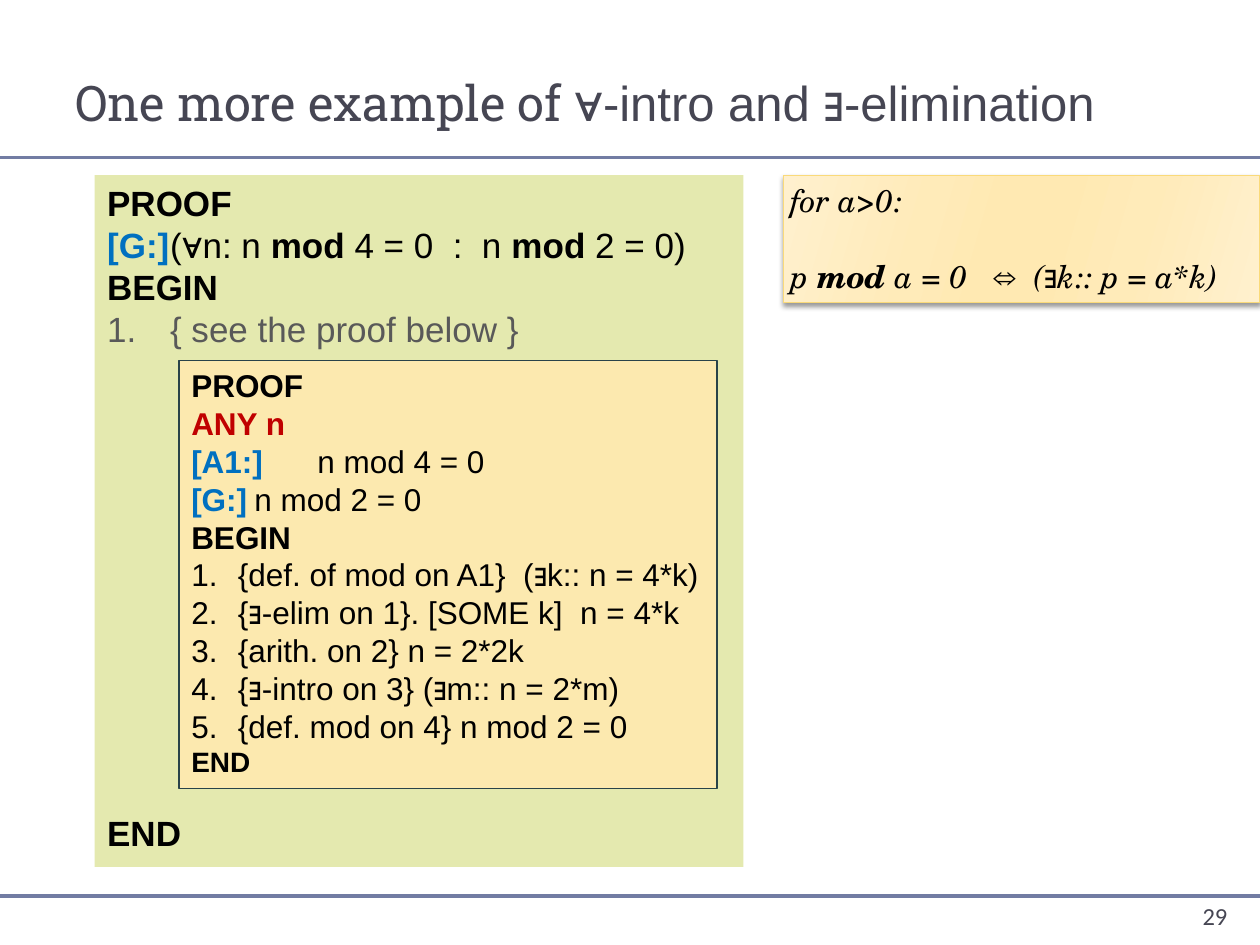
"""Build the slide on forall-introduction and exists-elimination."""
from dataclasses import dataclass

from lxml import etree
from pptx import Presentation
from pptx import util as u
from pptx.dml.color import RGBColor
from pptx.enum import shapes, text
from pptx.oxml import ns


@dataclass(frozen=True)
class Theme:
    ink: str = "000000"
    title: str = "464653"
    rule: str = "727CA3"
    label: str = "0070C0"
    any: str = "C00000"
    muted: str = "595959"
    outer: str = "E4E9AF"
    inner: str = "FCE9AF"
    inner_line: str = "294349"
    note_line: str = "FADA7A"
    note_stops: tuple = ((0, "FFF0CE"), (30, "FFEBB9"), (45, "FFE9B2"),
                         (55, "FFE9B2"), (73, "FFEBB9"), (100, "FFF0CE"))
    sans: str = "Arial"
    slab: str = "Roboto Slab"
    serif: str = "TeX Gyre Schola"
    plain: str = "Calibri"
    title_pt: int = 28
    proof_pt: int = 20
    step_pt: int = 18
    end_pt: int = 16
    page_pt: int = 14
    leading: float = 1.2


def sub(parent, tag, **attrs):
    """Append a drawing element with the given attributes."""
    return etree.SubElement(parent, ns.qn("a:" + tag), {k: str(v) for k, v in attrs.items()})


class Sheet:
    """Hold the theme and the slide, measured in 100 columns by 75 rows."""

    def __init__(self, prs, theme):
        """Add a title and content slide."""
        self.theme = theme
        self.col, self.row = prs.slide_width / 100, prs.slide_height / 75
        self.slide = prs.slides.add_slide(prs.slide_layouts[1])

    def box(self, x, y, w, h):
        """Turn grid units into lengths."""
        return [u.Emu(round(v)) for v in (x * self.col, y * self.row, w * self.col, h * self.row)]

    def place(self, s, *cells):
        """Move a placeholder to grid cells."""
        s.left, s.top, s.width, s.height = self.box(*cells)
        return s

    def paint(self, s, fill, line=None):
        """Give a shape a flat fill and an optional thin outline."""
        s.fill.solid()
        s.fill.fore_color.rgb = RGBColor.from_string(fill)
        if line:
            s.line.color.rgb = RGBColor.from_string(line)
            s.line.width = u.Pt(0.75)
        else:
            s.line.fill.background()

    def rule(self, y):
        """Draw a line across the slide."""
        x, top, w, _ = self.box(0, y, 100, 0)
        s = self.slide.shapes.add_connector(shapes.MSO_CONNECTOR.STRAIGHT, x, top, w, top)
        s.line.color.rgb = RGBColor.from_string(self.theme.rule)
        s.line.width = u.Pt(2.25)
        sub(s._element.spPr, "effectLst")

    def title(self, *runs):
        """Fill the title with (text, font) runs."""
        s = self.place(self.slide.shapes.title, 5, 2.5, 90, 8.4)
        tf = s.text_frame
        tf.auto_size = text.MSO_AUTO_SIZE.NONE
        tf.vertical_anchor = text.MSO_ANCHOR.BOTTOM
        p = tf.paragraphs[0]
        p.alignment = text.PP_ALIGN.LEFT
        p.font.size = u.Pt(self.theme.title_pt)
        for words, font in runs:
            r = p.add_run()
            r.text, r.font.name = words, font
            r.font.color.rgb = RGBColor.from_string(self.theme.title)

    def body(self, *cells):
        """Place the body placeholder as the outer proof panel."""
        s = self.place(self.slide.placeholders[1], *cells)
        self.paint(s, self.theme.outer)
        return s

    def panel(self, fill, line, *cells):
        """Add a rectangle without shadow."""
        s = self.slide.shapes.add_shape(shapes.MSO_SHAPE.RECTANGLE, *self.box(*cells))
        s.shadow.inherit = False
        self.paint(s, fill, line)
        return s

    def note(self, *cells):
        """Add a gradient panel with a soft shadow."""
        s = self.panel(self.theme.inner, self.theme.note_line, *cells)
        s.fill.gradient()
        spPr = s._element.spPr
        grad = spPr.find(ns.qn("a:gradFill"))
        for child in list(grad):
            grad.remove(child)
        stops = sub(grad, "gsLst")
        for pos, rgb in self.theme.note_stops:
            sub(sub(stops, "gs", pos=pos * 1000), "srgbClr", val=rgb)
        sub(grad, "lin", ang=16 * 60000, scaled=0)
        glow = sub(spPr.find(ns.qn("a:effectLst")), "outerShdw", blurRad=u.Pt(3),
                   dist=u.Pt(2), dir=90 * 60000, algn="ctr", rotWithShape=0)
        sub(sub(glow, "srgbClr", val=self.theme.ink), "alpha", val=40000)
        tf = s.text_frame
        tf.margin_left = tf.margin_right = u.Inches(0.05)
        return s

    def page(self, number):
        """Write the page number."""
        s = self.slide.shapes.add_textbox(*self.box(78.3, 71, 20.1, 4))
        p = s.text_frame.paragraphs[0]
        s.text_frame.word_wrap = True
        p.alignment = text.PP_ALIGN.RIGHT
        p.font.size, p.font.name = u.Pt(self.theme.page_pt), self.theme.plain
        r = p.add_run()
        r.text = number
        r.font.color.rgb = RGBColor.from_string(self.theme.title)

    def lines(self, s, rows, size, font, tab=1, indent=0.5, italic=False):
        """Write rows of (text, colour, bold) runs with optional number, gap and size."""
        tf = s.text_frame
        tf.auto_size = text.MSO_AUTO_SIZE.NONE
        tf.word_wrap = False
        tf.vertical_anchor = text.MSO_ANCHOR.TOP
        for i, (runs, opts) in enumerate(rows):
            p = tf.add_paragraph() if i else tf.paragraphs[0]
            pt = opts.get("size", size)
            p.alignment = text.PP_ALIGN.LEFT
            p.line_spacing = u.Pt(pt * self.theme.leading)
            p.space_before = u.Pt(pt * self.theme.leading * opts.get("gap", 0))
            p.font.size, p.font.name, p.font.italic = u.Pt(pt), font, italic
            pPr = p._p.get_or_add_pPr()
            numbered = "start" in opts
            pPr.set("marL", str(u.Inches(indent if numbered else 0)))
            pPr.set("indent", str(-u.Inches(indent if numbered else 0)))
            defaults = pPr.find(ns.qn("a:defRPr"))
            bullet = (sub(pPr, "buAutoNum", type="arabicPeriod", startAt=opts["start"])
                      if numbered else sub(pPr, "buNone"))
            tabs = sub(pPr, "tabLst")
            sub(tabs, "tab", pos=u.Inches(tab), algn="l")
            defaults.addprevious(bullet)
            defaults.addprevious(tabs)
            for words, colour, bold in runs:
                r = p.add_run()
                r.text, r.font.bold = words, bold
                r.font.color.rgb = RGBColor.from_string(colour)


def main():
    """Compose and save the slide."""
    prs = Presentation()
    prs.slide_width, prs.slide_height = u.Inches(10), u.Inches(7.5)
    t = Theme()
    sheet = Sheet(prs, t)

    def plain(words, colour=t.ink):
        return words, colour, False

    def strong(words, colour=t.ink):
        return words, colour, True

    def row(*runs, **opts):
        return runs, opts

    for y in (12.5, 71.1):
        sheet.rule(y)
    sheet.title(("One more example of ", t.slab), ("∀-intro and ∃-elimination", t.sans))
    sheet.page("29")

    sheet.lines(sheet.body(7.5, 13.9, 51.5, 54.9), [
        row(strong("PROOF")),
        row(strong("[G:]\t", t.label), plain("(∀n: n "), strong("mod"),
            plain(" 4 = 0  :  n "), strong("mod"), plain(" 2 = 0)")),
        row(strong("BEGIN")),
        row(plain("{ see the proof below }", t.muted), start=1),
        row(strong("END"), gap=11),
    ], t.proof_pt, t.sans, tab=0.8)

    steps = ["{def. of mod on A1}  (∃k:: n = 4*k)", "{∃-elim on 1}. [SOME k]  n = 4*k",
             "{arith. on 2} n = 2*2k", "{∃-intro on 3} (∃m:: n = 2*m)",
             "{def. mod on 4} n mod 2 = 0"]
    sheet.lines(sheet.panel(t.inner, t.inner_line, 14.2, 28.6, 42.7, 34), [
        row(strong("PROOF")),
        row(strong("ANY n", t.any)),
        row(strong("[A1:]", t.label), plain("\tn mod 4 = 0")),
        row(strong("[G:]", t.label), plain("\tn mod 2 = 0")),
        row(strong("BEGIN")),
        *(row(plain(step), start=n) for n, step in enumerate(steps, 1)),
        row(strong("END"), size=t.end_pt),
    ], t.step_pt, t.sans, indent=0.37)

    sheet.lines(sheet.note(62.2, 13.9, 37.8, 10.1), [
        row(plain("for a>0:")),
        row(plain("p "), strong("mod "), plain("a = 0   ⇔  (∃k:: p = a*k)"), gap=1),
    ], t.step_pt, t.serif, italic=True)
    prs.save("out.pptx")


if __name__ == "__main__":
    main()
